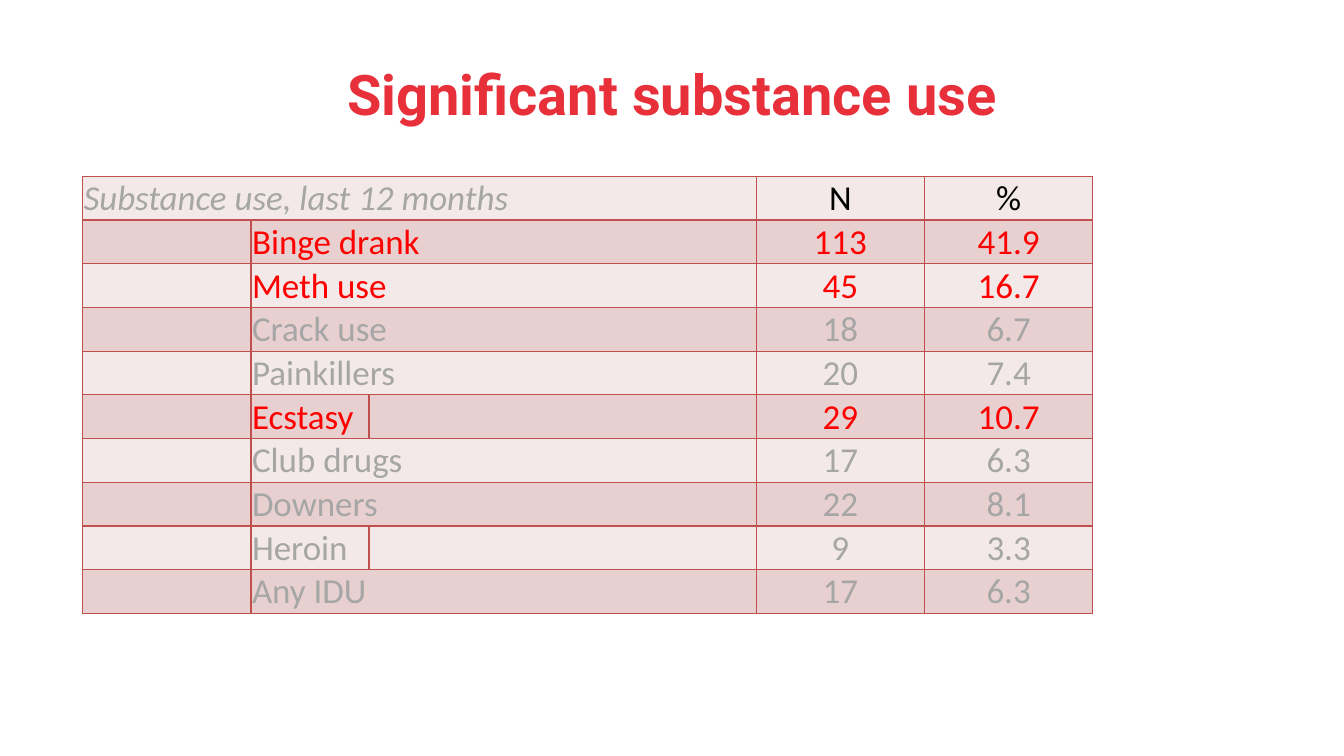
import lxml.etree
import pptx
import pptx.dml.color
import pptx.enum.text
import pptx.oxml.ns
import pptx.util

Inches = pptx.util.Inches
ALIGN = pptx.enum.text.PP_ALIGN
ANCHOR = pptx.enum.text.MSO_ANCHOR

GREY, RED, BLACK, BORDER = "A6A6A6", "FF0000", "000000", "C0504D"
BANDS = ("F4E9E9", "E8D0D0")
COLUMN_WIDTHS = (1.67, 1.17, 3.84, 1.67, 1.67)
ROW_HEIGHT = 0.41
HIGHLIGHT_PERCENT = 10
UNMERGED = ("Ecstasy", "Heroin")
SUBSTANCES = (
    ("Binge drank", "113", "41.9"),
    ("Meth use", "45", "16.7"),
    ("Crack use", "18", "6.7"),
    ("Painkillers", "20", "7.4"),
    ("Ecstasy", "29", "10.7"),
    ("Club drugs", "17", "6.3"),
    ("Downers", "22", "8.1"),
    ("Heroin", "9", "3.3"),
    ("Any IDU", "17", "6.3"),
)


def color(value):
    return pptx.dml.color.RGBColor.from_string(value)


def set_attributes(target, values):
    for name, value in values.items():
        setattr(target, name, value)


def write_paragraph(paragraph, text, hex_color, alignment, font_values):
    paragraph.text = text
    paragraph.alignment = alignment
    set_attributes(paragraph.font, font_values)
    paragraph.font.color.rgb = color(hex_color)


def style_cell(cell, fill_color):
    properties = cell._tc.get_or_add_tcPr()
    for side in ("a:lnL", "a:lnR", "a:lnT", "a:lnB"):
        line = lxml.etree.SubElement(
            properties, pptx.oxml.ns.qn(side), w=str(pptx.util.Pt(1))
        )
        fill = lxml.etree.SubElement(line, pptx.oxml.ns.qn("a:solidFill"))
        lxml.etree.SubElement(fill, pptx.oxml.ns.qn("a:srgbClr"), val=BORDER)
    cell.fill.solid()
    cell.fill.fore_color.rgb = color(fill_color)


def write_cell(cell, text, hex_color, alignment=ALIGN.LEFT, italic=False):
    set_attributes(cell, {
        "margin_left": Inches(0.01),
        "margin_right": Inches(0.01),
        "margin_top": Inches(0.01),
        "margin_bottom": 0,
        "vertical_anchor": ANCHOR.BOTTOM,
    })
    write_paragraph(
        cell.text_frame.paragraphs[0], text, hex_color, alignment,
        {"name": "Calibri", "size": pptx.util.Pt(25), "italic": italic},
    )


def add_title(slide, left, top, width, height):
    title = slide.shapes.title
    set_attributes(title, {
        "left": Inches(left), "top": Inches(top),
        "width": Inches(width), "height": Inches(height),
    })
    title.text_frame.vertical_anchor = ANCHOR.MIDDLE
    write_paragraph(
        title.text_frame.paragraphs[0], "Significant substance use",
        "E8303B", ALIGN.CENTER,
        {"name": "Roboto", "size": pptx.util.Pt(40), "bold": True},
    )


def add_substance_table(slide, left, top):
    row_count = len(SUBSTANCES) + 1
    table = slide.shapes.add_table(
        row_count, len(COLUMN_WIDTHS), Inches(left), Inches(top),
        Inches(sum(COLUMN_WIDTHS)), Inches(ROW_HEIGHT * row_count),
    ).table
    for column, width in zip(table.columns, COLUMN_WIDTHS):
        column.width = Inches(width)
    for index, row in enumerate(table.rows):
        row.height = Inches(ROW_HEIGHT)
        for cell in row.cells:
            style_cell(cell, BANDS[index % 2])

    table.cell(0, 0).merge(table.cell(0, 2))
    write_cell(table.cell(0, 0), "Substance use, last 12 months", GREY, italic=True)
    write_cell(table.cell(0, 3), "N", BLACK, ALIGN.CENTER)
    write_cell(table.cell(0, 4), "%", BLACK, ALIGN.CENTER)

    for index, (name, count, percent) in enumerate(SUBSTANCES, start=1):
        text_color = RED if float(percent) >= HIGHLIGHT_PERCENT else GREY
        if name not in UNMERGED:
            table.cell(index, 1).merge(table.cell(index, 2))
        write_cell(table.cell(index, 1), name, text_color)
        write_cell(table.cell(index, 3), count, text_color, ALIGN.CENTER)
        write_cell(table.cell(index, 4), percent, text_color, ALIGN.CENTER)


def main():
    presentation = pptx.Presentation()
    presentation.slide_width = Inches(13.33)
    presentation.slide_height = Inches(7.5)
    slide = presentation.slides.add_slide(presentation.slide_layouts[5])
    add_title(slide, 0.82, 0.3, 11.69, 1.25)
    add_substance_table(slide, 0.82, 1.75)
    presentation.save("out.pptx")


if __name__ == "__main__":
    main()
